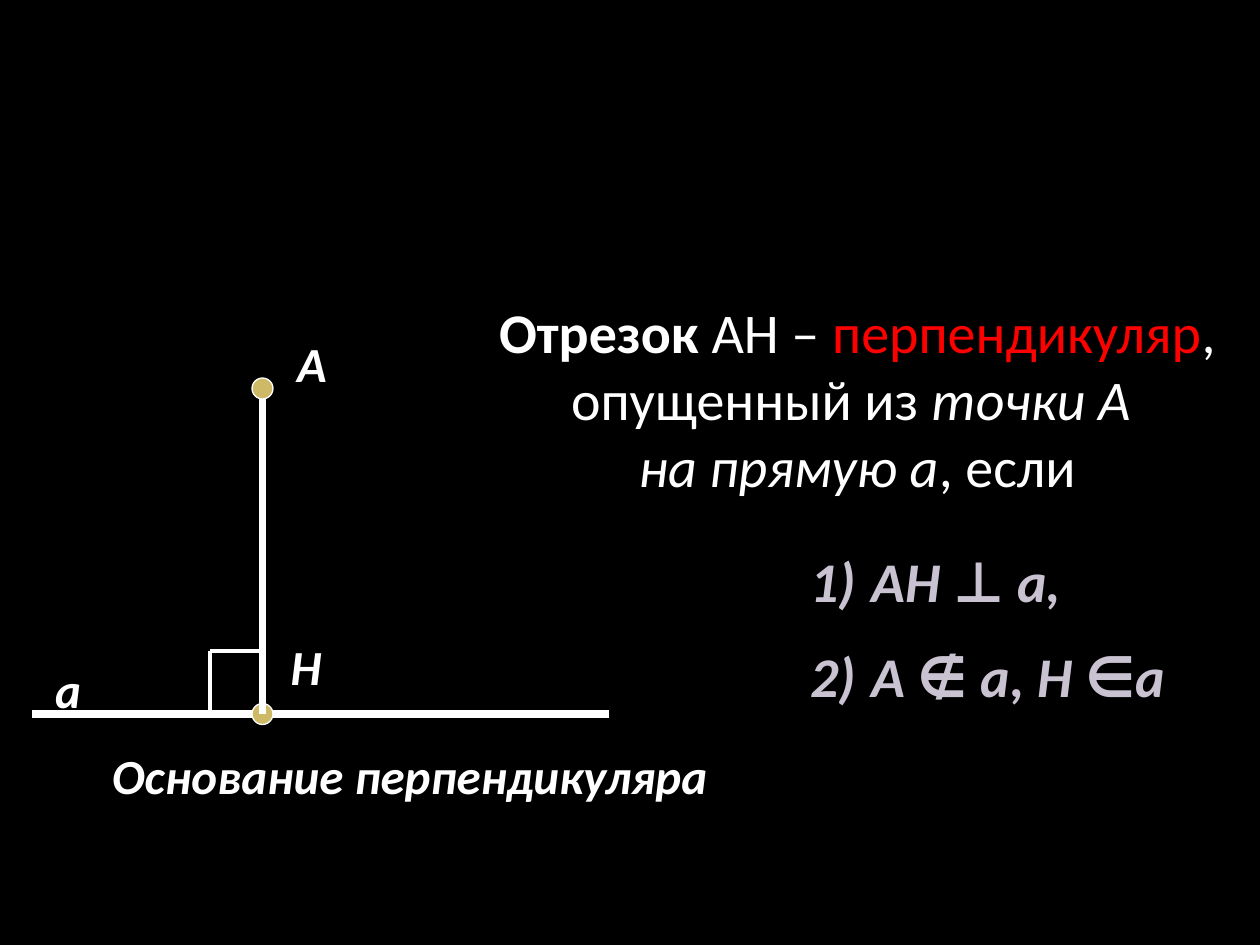
from dataclasses import dataclass

from lxml import etree
from pptx import Presentation
from pptx.dml.color import RGBColor
from pptx.enum.shapes import MSO_CONNECTOR, MSO_SHAPE
from pptx.enum.text import MSO_ANCHOR, MSO_AUTO_SIZE, PP_ALIGN
from pptx.oxml.ns import qn
from pptx.util import Inches, Length, Pt

STRAIGHT = MSO_CONNECTOR.STRAIGHT
DOT = MSO_SHAPE.FLOWCHART_CONNECTOR
TOP = MSO_ANCHOR.TOP
LEFT, CENTER, RIGHT = PP_ALIGN.LEFT, PP_ALIGN.CENTER, PP_ALIGN.RIGHT
FIT, FIXED = MSO_AUTO_SIZE.SHAPE_TO_FIT_TEXT, MSO_AUTO_SIZE.NONE


@dataclass(frozen=True)
class Theme:
    font: str = "Calibri"
    ground: RGBColor = RGBColor(0x00, 0x00, 0x00)
    ink: RGBColor = RGBColor(0xFF, 0xFF, 0xFF)
    accent: RGBColor = RGBColor(0xFF, 0x00, 0x00)
    point: RGBColor = RGBColor(0xCE, 0xB9, 0x66)
    condition: RGBColor = RGBColor(0xC9, 0xC2, 0xD1)
    label_size: int = 28
    text_size: int = 32
    thick: float = 4.5
    thin: float = 2.25
    outline: float = 0.75


@dataclass(frozen=True)
class Area:
    """A rectangle in grid columns and rows."""
    column: float
    row: float
    columns: float
    rows: float


@dataclass(frozen=True)
class Segment:
    start: tuple[float, float]
    end: tuple[float, float]
    width: float


@dataclass(frozen=True)
class Label:
    text: str
    area: Area


@dataclass(frozen=True)
class Span:
    text: str
    bold: bool = False
    italic: bool = False
    color: RGBColor | None = None


THEME = Theme()

# The slide is a grid of 120 columns and 90 rows, twelve to the inch
COLUMNS, ROWS = 120, 90
FOOT_COLUMN, BASE_ROW = 25, 68
APEX_ROW, CORNER_COLUMN, CORNER_ROW = 37, 20, 62
DOT_SIZE = 2

LINE_A = Segment((3, BASE_ROW), (58, BASE_ROW), THEME.thick)
RIGHT_ANGLE = [
    Segment((CORNER_COLUMN, BASE_ROW), (CORNER_COLUMN, CORNER_ROW), THEME.thin),
    Segment((CORNER_COLUMN, CORNER_ROW), (FOOT_COLUMN, CORNER_ROW), THEME.thin),
]
PERPENDICULAR = Segment((FOOT_COLUMN, APEX_ROW + 1), (FOOT_COLUMN, BASE_ROW),
                        THEME.thick)
LABELS = [
    Label("а", Area(4, 62.2, 4.9, 6.8)),
    Label("А", Area(27, 31.2, 5.3, 6.8)),
    Label("Н", Area(26, 60, 5.8, 6.8)),
]
CAPTION = Label("Основание перпендикуляра", Area(4, 71, 70, 4.8))

DEFINITION_AREA = Area(46, 27.7, 71.3, 20.6)
DEFINITION = [
    [Span("Отрезок", bold=True), Span(" АН – "),
     Span("перпендикуляр", color=THEME.accent), Span(",")],
    [Span("опущенный из "), Span("точки А ", italic=True)],
    [Span("на прямую а", italic=True), Span(", если")],
]
CONDITIONS_AREA = Area(76, 51.4, 48, 17.2)
CONDITIONS = [
    [Span(" АН ", True, True), Span("⊥", True), Span(" а,", True, True)],
    [Span(" А ∉ а, Н ∈а", True, True)],
]


def grid(units: float) -> Length:
    return Inches(units / 12)


def place(shape, area: Area) -> None:
    shape.left, shape.top = grid(area.column), grid(area.row)
    shape.width, shape.height = grid(area.columns), grid(area.rows)


def style_font(font, size: int, color: RGBColor) -> None:
    font.name, font.size = THEME.font, Pt(size)
    font.color.rgb = color


def draw_segment(slide, segment: Segment) -> None:
    ends = [grid(value) for value in (*segment.start, *segment.end)]
    line = slide.shapes.add_connector(STRAIGHT, *ends)
    line.line.color.rgb = THEME.ink
    line.line.width = Pt(segment.width)
    etree.SubElement(line._element.spPr, qn("a:effectLst"))


def draw_point(slide, column: float, row: float) -> None:
    half = DOT_SIZE / 2
    dot = slide.shapes.add_shape(DOT, grid(column - half), grid(row - half),
                                 grid(DOT_SIZE), grid(DOT_SIZE))
    dot.shadow.inherit = False
    dot.fill.solid()
    dot.fill.fore_color.rgb = THEME.point
    dot.line.color.rgb = THEME.ink
    dot.line.width = Pt(THEME.outline)


def draw_label(slide, label: Label, align: PP_ALIGN, wrap: bool = False):
    box = slide.shapes.add_textbox(0, 0, 0, 0)
    place(box, label.area)
    frame = box.text_frame
    frame.word_wrap = wrap
    para = frame.paragraphs[0]
    para.text, para.alignment = label.text, align
    style_font(para.font, THEME.label_size, THEME.ink)
    para.font.bold = para.font.italic = True
    return box


def fill_placeholder(holder, area: Area, lines: list[list[Span]],
                     align: PP_ALIGN, color: RGBColor, gap: float = 0) -> None:
    place(holder, area)
    frame = holder.text_frame
    frame.word_wrap, frame.auto_size = True, FIT
    frame.vertical_anchor = TOP
    for index, spans in enumerate(lines):
        para = frame.add_paragraph() if index else frame.paragraphs[0]
        para.alignment = align
        para.space_before = Pt(gap if index else 0)
        style_font(para.font, THEME.text_size, color)
        for span in spans:
            run = para.add_run()
            run.text = span.text
            run.font.bold, run.font.italic = span.bold, span.italic
            if span.color is not None:
                run.font.color.rgb = span.color


def number_paragraphs(frame) -> None:
    indent = Inches(0.38)
    for para in frame.paragraphs:
        properties = para._p.get_or_add_pPr()
        properties.set("marL", str(indent))
        properties.set("indent", str(-indent))
        bullet = etree.Element(qn("a:buAutoNum"), type="arabicParenR")
        properties.find(qn("a:defRPr")).addprevious(bullet)


def main() -> None:
    deck = Presentation()
    deck.slide_width, deck.slide_height = grid(COLUMNS), grid(ROWS)
    slide = deck.slides.add_slide(deck.slide_layouts[1])
    slide.background.fill.solid()
    slide.background.fill.fore_color.rgb = THEME.ground

    # Definition and its numbered conditions
    fill_placeholder(slide.shapes.title, DEFINITION_AREA, DEFINITION,
                     CENTER, THEME.ink)
    conditions = slide.placeholders[1]
    fill_placeholder(conditions, CONDITIONS_AREA, CONDITIONS,
                     LEFT, THEME.condition, gap=THEME.text_size / 2)
    number_paragraphs(conditions.text_frame)

    # Line a, right angle, points A and H, segment AH
    for segment in (LINE_A, *RIGHT_ANGLE):
        draw_segment(slide, segment)
    for row in (APEX_ROW, BASE_ROW):
        draw_point(slide, FOOT_COLUMN, row)
    draw_segment(slide, PERPENDICULAR)

    # Names and caption
    for label in LABELS:
        draw_label(slide, label, RIGHT).text_frame.auto_size = FIT
    caption = draw_label(slide, CAPTION, CENTER, wrap=True).text_frame
    caption.auto_size = FIXED
    caption.margin_top = caption.margin_bottom = Inches(0.04)
    caption.margin_left = caption.margin_right = Inches(0.09)
    caption.paragraphs[0].line_spacing = 0.93

    deck.save("out.pptx")


if __name__ == "__main__":
    main()
